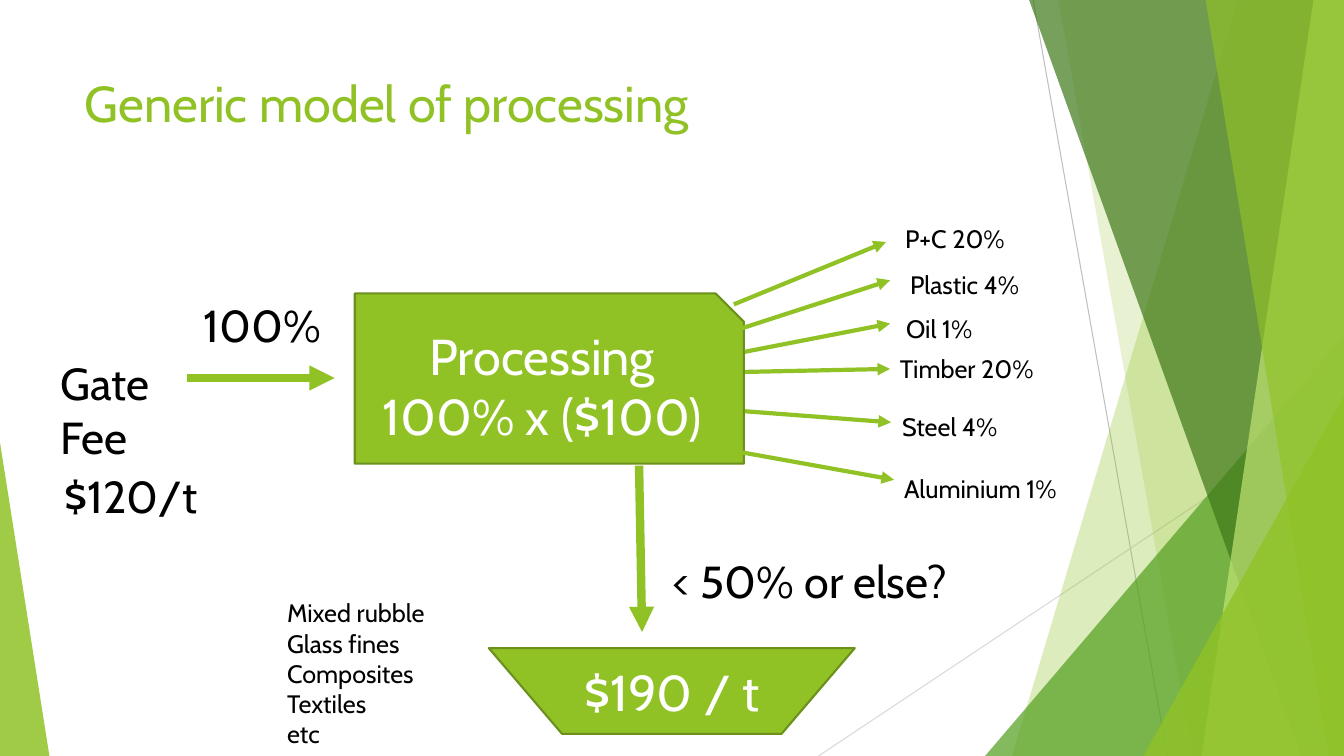
from dataclasses import dataclass

from lxml.etree import SubElement
from pptx import Presentation
from pptx.dml.color import RGBColor
from pptx.enum.shapes import MSO_CONNECTOR, MSO_SHAPE
from pptx.enum.text import MSO_ANCHOR, PP_ALIGN
from pptx.oxml.ns import qn
from pptx.util import Inches, Pt

# The slide is a grid of tenth-inch cells.
CELL = Inches(0.1)
COLUMNS, ROWS = 133.33, 75


@dataclass(frozen=True)
class Theme:
    font: str = "Cabin"
    green: str = "90C226"
    outline: str = "6B901C"
    leaf: str = "54A021"
    forest: str = "3F7819"
    lime: str = "C0E474"
    ink: str = "000000"
    paper: str = "FFFFFF"
    rule_dark: str = "BFBFBF"
    rule_light: str = "D9D9D9"
    heading: int = 36
    callout: int = 32
    label: int = 18
    hairline: float = 0.75
    border: float = 1.5
    thin_arrow: int = 3
    thick_arrow: int = 6


THEME = Theme()


@dataclass(frozen=True)
class Box:
    left: float
    top: float
    width: float
    height: float

    def area(self, column, row, width, height):
        return Box(self.left + column, self.top + row, width, height)

    def point(self, column, row):
        return cells(self.left + column, self.top + row)

    def emu(self):
        return cells(self.left, self.top, self.width, self.height)


def cells(*counts):
    return [round(count * CELL) for count in counts]


def write(frame, text, size, color, align=PP_ALIGN.LEFT, **frame_format):
    for key, value in ({"word_wrap": True, "vertical_anchor": MSO_ANCHOR.TOP} | frame_format).items():
        setattr(frame, key, value)
    frame.text = text
    font_format = {"name": THEME.font, "size": Pt(size), "bold": False}
    for paragraph in frame.paragraphs:
        paragraph.alignment = align
        for run in paragraph.runs:
            for key, value in font_format.items():
                setattr(run.font, key, value)
            run.font.color.rgb = RGBColor.from_string(color)


def add_label(slide, box, text, size, wrap=True):
    label = slide.shapes.add_textbox(*box.emu())
    write(label.text_frame, text, size, THEME.ink, word_wrap=wrap)


def paint(shape, color, opacity=100):
    """Fill without outline or shadow; opacity is a percentage."""
    shape.shadow.inherit = False
    shape.line.fill.background()
    shape.fill.solid()
    shape.fill.fore_color.rgb = RGBColor.from_string(color)
    if opacity < 100:
        tint = shape._element.spPr.find(qn("a:solidFill"))[0]
        SubElement(tint, qn("a:alpha"), val=str(opacity * 1000))


def add_stage(slide, box, preset, text):
    stage = slide.shapes.add_shape(preset, *box.emu())
    paint(stage, THEME.green)
    stage.line.color.rgb = RGBColor.from_string(THEME.outline)
    stage.line.width = Pt(THEME.border)
    write(stage.text_frame, text, THEME.heading, THEME.paper,
          PP_ALIGN.CENTER, vertical_anchor=MSO_ANCHOR.MIDDLE)


def add_line(slide, start, end, color, weight, arrow=False):
    line = slide.shapes.add_connector(MSO_CONNECTOR.STRAIGHT, *start, *end)
    line.line.color.rgb = RGBColor.from_string(color)
    line.line.width = Pt(weight)
    properties = line._element.spPr
    if arrow:
        SubElement(properties.find(qn("a:ln")), qn("a:tailEnd"), type="triangle")
    SubElement(properties, qn("a:effectLst"))


def add_panel(slide, box, top_column, bottom_column, color, opacity):
    """A full-height band from a slanted left edge to the box's right side."""
    builder = slide.shapes.build_freeform(*box.point(top_column, 0))
    corners = [(box.width, 0), (box.width, box.height), (bottom_column, box.height)]
    builder.add_line_segments([box.point(*corner) for corner in corners], close=True)
    paint(builder.convert_to_shape(), color, opacity)


def add_wedge(slide, box, apex, color, opacity):
    wedge = slide.shapes.add_shape(MSO_SHAPE.ISOSCELES_TRIANGLE, *box.emu())
    wedge.adjustments[0] = apex
    paint(wedge, color, opacity)


def draw_backdrop(slide, box):
    right, bottom = box.width, box.height

    def right_wedge(width, height, color, opacity):
        corner = box.area(right - width, bottom - height, width, height)
        add_wedge(slide, corner, 1, color, opacity)

    for start, end, color in [
        ((102.5, 0), (115.8, bottom), THEME.rule_dark),
        ((right, 40.3), (81.2, bottom), THEME.rule_light),
    ]:
        add_line(slide, box.point(*start), box.point(*end), color, THEME.hairline)
    add_panel(slide, box, 122.8, 100.4, THEME.green, 30)
    add_panel(slide, box, 105, 118.3, THEME.green, 20)
    right_wedge(35.6, 41.7, THEME.leaf, 72)
    add_panel(slide, box, 102.1, 129.1, THEME.forest, 70)
    add_panel(slide, box, 130.3, 119.2, THEME.lime, 70)
    add_panel(slide, box, 119.6, 131.8, THEME.green, 65)
    right_wedge(19.9, 35.7, THEME.green, 80)
    add_wedge(slide, box.area(0, bottom - 31.1, 4.9, 31.1), 0, THEME.green, 85)


def draw_title(slide, box, text):
    title = slide.shapes.title
    for key, value in zip(("left", "top", "width", "height"), box.emu()):
        setattr(title, key, value)
    write(title.text_frame, text, THEME.heading, THEME.green)


def draw_gate(slide, box):
    add_label(slide, box.area(14.2, 0, 13.7, 6.4), "100%", THEME.callout)
    add_label(slide, box.area(0, 5.8, 15.3, 11.8), "Gate Fee", THEME.callout)
    add_label(slide, box.area(0.4, 17, 15.6, 6.4), "$120/t", THEME.callout, wrap=False)
    add_line(slide, box.point(13.6, 8.5), box.point(28.2, 8.5),
             THEME.green, THEME.thick_arrow, arrow=True)


def draw_outputs(slide, box):
    for text, start, end, label, width in [
        ("P+C 20%", (0, 8.5), (15.1, 2.3), (16, 0), 17.5),
        ("Plastic 4%", (0.4, 11), (15.5, 6.1), (16.5, 4.5), 17.5),
        ("Oil 1%", (1.1, 13.2), (15.5, 10.4), (16.1, 8.9), 17.5),
        ("Timber 20%", (1.1, 15.2), (15.5, 14.9), (15.5, 12.9), 17.5),
        ("Steel 4%", (1.1, 19.1), (15.6, 20.2), (15.7, 18.6), 17.5),
        ("Aluminium 1%", (0.9, 23.2), (15.9, 25.9), (15.9, 24.8), 29.5),
    ]:
        add_line(slide, box.point(*start), box.point(*end),
                 THEME.green, THEME.thin_arrow, arrow=True)
        add_label(slide, box.area(*label, width, 4), text, THEME.label)


def draw_residue(slide, box):
    add_line(slide, box.point(35.9, 0), box.point(36.2, 16.5),
             THEME.green, THEME.thick_arrow, arrow=True)
    add_label(slide, box.area(38.2, 8.2, 36, 6.4), "< 50% or else?", THEME.callout)
    add_label(slide, box.area(0, 12.6, 46.7, 19.2),
              "Mixed rubble\nGlass fines\nComposites\nTextiles\netc", THEME.label)
    add_stage(slide, box.area(21, 18.1, 36.3, 8.5),
              MSO_SHAPE.FLOWCHART_MANUAL_OPERATION, "$190 / t")


def main():
    deck = Presentation()
    deck.slide_width, deck.slide_height = cells(COLUMNS, ROWS)
    slide = deck.slides.add_slide(deck.slide_layouts[5])
    draw_backdrop(slide, Box(0, 0, COLUMNS, ROWS))
    draw_title(slide, Box(7.4, 6.7, 94, 14.4), "Generic model of processing")
    draw_gate(slide, Box(5, 29, 28.2, 23.4))
    add_stage(slide, Box(35.2, 29.1, 38.6, 16.9), MSO_SHAPE.SNIP_1_RECTANGLE,
              "Processing\n100% x ($100)")
    draw_outputs(slide, Box(72.8, 21.7, 45.4, 28.8))
    draw_residue(slide, Box(27.5, 46.2, 74.2, 31.8))
    deck.save("out.pptx")


if __name__ == "__main__":
    main()
